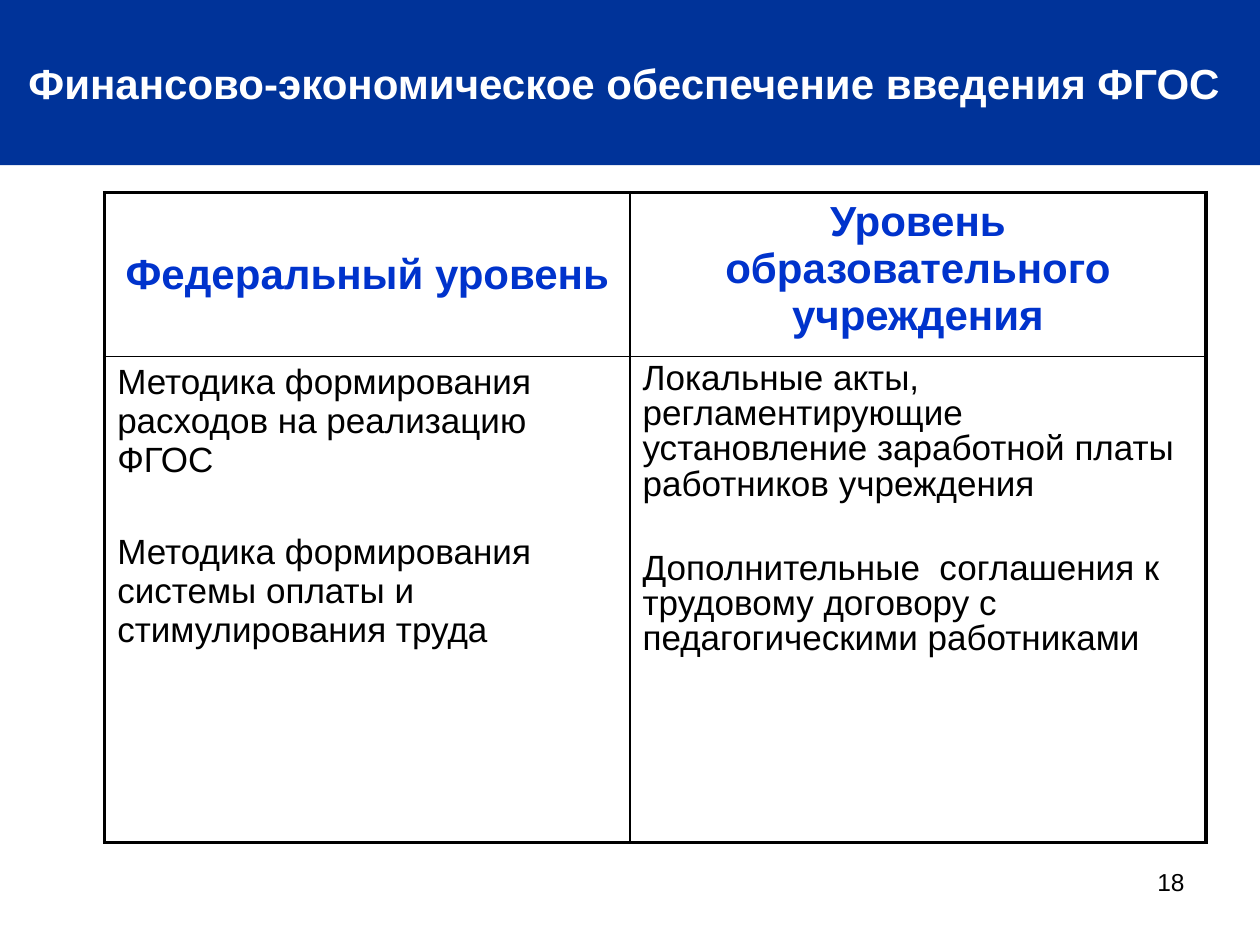
from lxml import etree
from pptx import Presentation
from pptx import util as u
from pptx.dml.color import RGBColor
from pptx.enum import shapes, text
from pptx.oxml.ns import qn

HUES = {"band": "003399", "head": "0033CC", "ink": "000000", "white": "FFFFFF"}
LEFT, MID, RIGHT = text.PP_ALIGN.LEFT, text.PP_ALIGN.CENTER, text.PP_ALIGN.RIGHT


def style(para, words, size, hue, align, bold=False):
    para.text = words
    para.alignment = align
    para.font.name = "Arial"
    para.font.size = u.Pt(size)
    para.font.bold = bold
    para.font.color.rgb = RGBColor.from_string(HUES[hue])


def edge(cell, side, width):
    """Draw one cell border; side is L, R, T or B."""
    line = etree.SubElement(cell._tc.get_or_add_tcPr(), qn("a:ln" + side), w=str(u.Pt(width)))
    fill = etree.SubElement(line, qn("a:solidFill"))
    etree.SubElement(fill, qn("a:srgbClr"), val=HUES["ink"])


deck = Presentation()
deck.slide_width, deck.slide_height = u.Cm(25.4), u.Cm(19.05)
slide = deck.slides.add_slide(deck.slide_layouts[6])

# Page number
page = slide.shapes.add_textbox(u.Cm(18.21), u.Cm(17.35), u.Cm(5.92), u.Cm(1.32))
page.text_frame.word_wrap = True
style(page.text_frame.paragraphs[0], "18", 14, "ink", RIGHT)

# Title band
band = slide.shapes.add_shape(shapes.MSO_SHAPE.RECTANGLE, 0, 0, deck.slide_width, u.Cm(3.33))
band.shadow.inherit = False
band.fill.solid()
band.fill.fore_color.rgb = RGBColor.from_string(HUES["band"])
band.line.fill.background()
band.text_frame.word_wrap = False
band.text_frame.vertical_anchor = text.MSO_ANCHOR.MIDDLE
style(band.text_frame.paragraphs[0], "Финансово-экономическое обеспечение введения ФГОС ",
      24, "white", MID, True)

# Table of levels
heads = ["Федеральный уровень", "Уровень образовательного учреждения"]
bodies = [
    ["Методика формирования расходов на реализацию ФГОС",
     "Методика формирования системы оплаты и стимулирования труда"],
    ["Локальные акты, регламентирующие установление заработной платы работников учреждения",
     "Дополнительные  соглашения к трудовому договору с педагогическими работниками"],
]
widths, heights = [10.59, 11.61], [3.3, 9.8]
leads, gaps = [1.0, 0.9], [30.5, 28]

grid = slide.shapes.add_table(2, 2, u.Cm(2.11), u.Cm(3.88),
                              u.Cm(sum(widths)), u.Cm(sum(heights))).table
for i in range(2):
    grid.columns[i].width = u.Cm(widths[i])
    grid.rows[i].height = u.Cm(heights[i])

for col in range(2):
    top, low = grid.cell(0, col), grid.cell(1, col)
    style(top.text_frame.paragraphs[0], heads[col], 24, "head", MID, True)
    for i, words in enumerate(bodies[col]):
        frame = low.text_frame
        para = frame.add_paragraph() if i else frame.paragraphs[0]
        style(para, words, 20, "ink", LEFT)
        para.line_spacing = leads[col]
        para.space_before = u.Pt(gaps[col] if i else 0)
    for row, cell in enumerate([top, low]):
        outer = {"L": col == 0, "R": col == 1, "T": row == 0, "B": row == 1}
        for side, thick in outer.items():
            edge(cell, side, 2.25 if thick else 1)
        cell.fill.background()
grid.cell(0, 0).vertical_anchor = text.MSO_ANCHOR.MIDDLE

deck.save("out.pptx")
